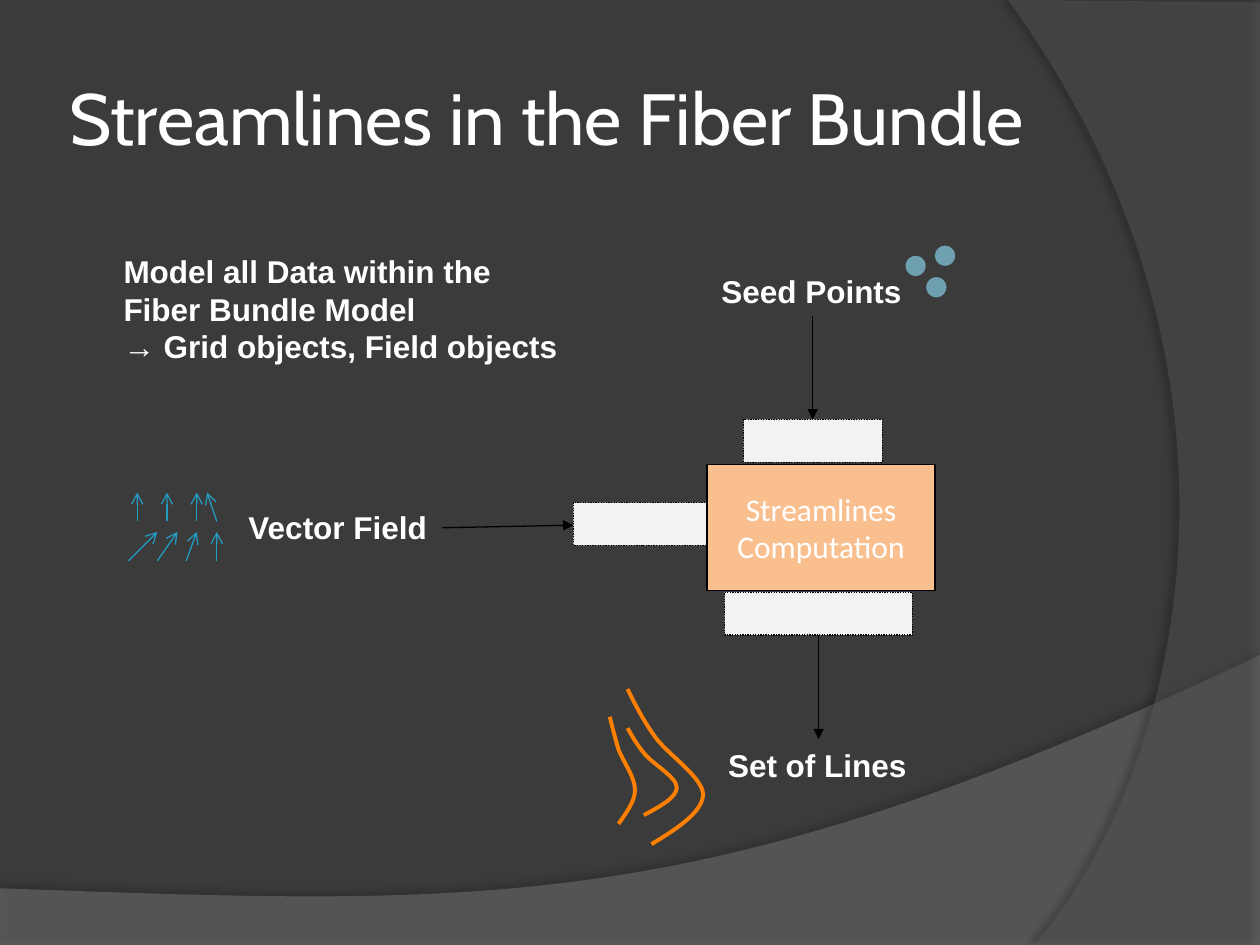
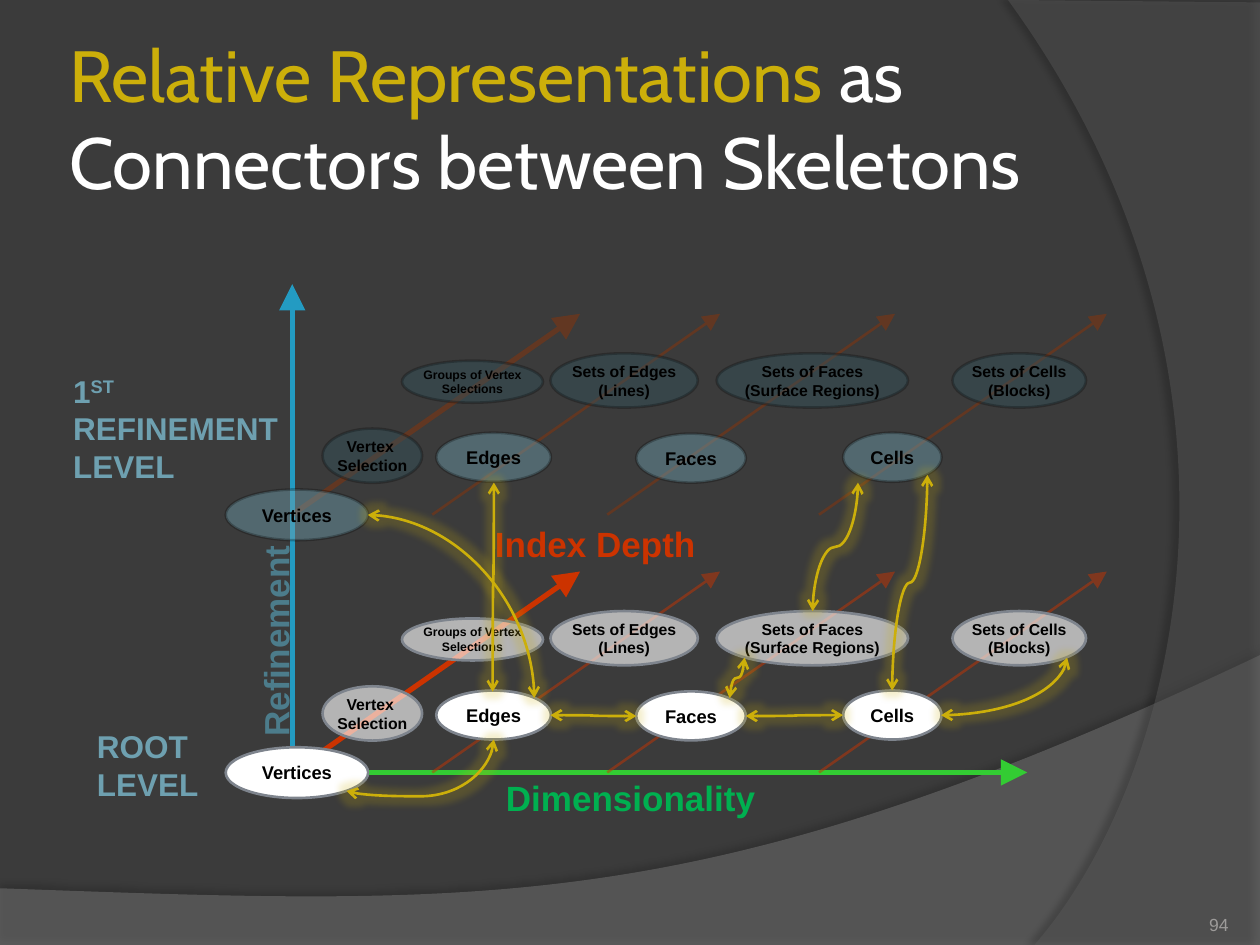
from lxml import etree
from pptx import Presentation
from pptx.dml.color import RGBColor
from pptx.enum.dml import MSO_LINE
from pptx.enum.shapes import MSO_CONNECTOR, MSO_SHAPE
from pptx.enum.text import MSO_ANCHOR, PP_ALIGN
from pptx.oxml.ns import qn
from pptx.util import Pt

STRAIGHT, CURVE = MSO_CONNECTOR.STRAIGHT, MSO_CONNECTOR.CURVE
RECT, OVAL = MSO_SHAPE.RECTANGLE, MSO_SHAPE.OVAL
TOP, MIDDLE, BOTTOM = MSO_ANCHOR.TOP, MSO_ANCHOR.MIDDLE, MSO_ANCHOR.BOTTOM
LEFT, CENTER, RIGHT = PP_ALIGN.LEFT, PP_ALIGN.CENTER, PP_ALIGN.RIGHT
DOTTED = MSO_LINE.ROUND_DOT

BLACK = RGBColor(0x00, 0x00, 0x00)
WHITE = RGBColor(0xFF, 0xFF, 0xFF)
BACKDROP = RGBColor(0x3B, 0x3B, 0x3B)
WAVE_GREY = RGBColor(0x7F, 0x7F, 0x7F)
SIDE_GREY = RGBColor(0x5E, 0x5E, 0x5E)
NUMBER_GREY = RGBColor(0x9D, 0x9B, 0x9A)
RIM_GREY = RGBColor(0x7E, 0x84, 0x8D)
PORT_GREY = RGBColor(0xF2, 0xF2, 0xF2)
PEACH = RGBColor(0xFA, 0xBF, 0x8F)
ORANGE = RGBColor(0xFF, 0x80, 0x00)
GOLD = RGBColor(0xCC, 0xAF, 0x0A)
BLUE = RGBColor(0x23, 0x9B, 0xC2)
STEEL = RGBColor(0x6E, 0xA0, 0xB0)
DEEP_STEEL = RGBColor(0x32, 0x52, 0x5D)
TEAL = RGBColor(0x4C, 0x7C, 0x8B)
RED = RGBColor(0xCC, 0x33, 0x00)
BROWN = RGBColor(0x99, 0x33, 0x00)
LIME = RGBColor(0x33, 0xCC, 0x33)
GREEN = RGBColor(0x00, 0xB0, 0x50)


# ---- Drawing helpers ----
def sub(parent, tag, **attrs):
    return etree.SubElement(parent, qn(tag), {k: str(v) for k, v in attrs.items()})


def fade(parent, percent):
    """Make the first colour inside parent partly transparent."""
    if percent < 100:
        sub(parent.find(".//" + qn("a:srgbClr")), "a:alpha", val=percent * 1000)


def effect(shape, tag, color, percent, **attrs):
    effects = shape._element.spPr.find(qn("a:effectLst"))
    clr = sub(sub(effects, tag, **attrs), "a:srgbClr", val=color)
    sub(clr, "a:alpha", val=percent * 1000)


def paint(shape, fill=None, alpha=100, line=None, width=0.75, line_alpha=100):
    shape.shadow.inherit = False
    if fill is None:
        shape.fill.background()
    else:
        shape.fill.solid()
        shape.fill.fore_color.rgb = fill
        fade(shape._element.spPr.find(qn("a:solidFill")), alpha)
    if line is None:
        shape.line.fill.background()
    else:
        shape.line.color.rgb = line
        shape.line.width = Pt(width)
        fade(shape._element.spPr.find(qn("a:ln")), line_alpha)


def write(tf, lines, size, color, font="Arial", bold=True, align=CENTER,
          anchor=MIDDLE, inset=0):
    """Each line is a string or a list of run strings."""
    tf.vertical_anchor = anchor
    tf.margin_left = tf.margin_right = tf.margin_top = tf.margin_bottom = Pt(inset)
    for i, line in enumerate(lines):
        p = tf.paragraphs[0] if i == 0 else tf.add_paragraph()
        p.alignment = align
        for words in [line] if isinstance(line, str) else line:
            r = p.add_run()
            r.text = words
            r.font.name, r.font.size, r.font.bold = font, Pt(size), bold
            r.font.color.rgb = color


def text(s, x, y, w, h, lines, size, color, wrap=False, **style):
    sp = s.shapes.add_textbox(Pt(x), Pt(y), Pt(w), Pt(h))
    sp.text_frame.word_wrap = wrap
    write(sp.text_frame, lines, size, color, **style)
    return sp


def label(s, x, y, w, h, lines, color=WHITE):
    return text(s, x, y, w, h, lines, 18, color, align=LEFT, anchor=TOP, inset=3.6)


def box(s, kind, x, y, w, h, **look):
    sp = s.shapes.add_shape(kind, Pt(x), Pt(y), Pt(w), Pt(h))
    paint(sp, **look)
    return sp


def node(s, kind, x, y, w, h, lines, size, color, font="Arial", bold=True, **look):
    tf = box(s, kind, x, y, w, h, **look).text_frame
    tf.word_wrap = False
    write(tf, lines, size, color, font, bold)


def arrow(s, x1, y1, x2, y2, color, width=0.75, alpha=100, tail="triangle",
          head=None, kind=STRAIGHT, tip="med"):
    cx = s.shapes.add_connector(kind, Pt(x1), Pt(y1), Pt(x2), Pt(y2))
    cx.line.color.rgb = color
    cx.line.width = Pt(width)
    ln = cx._element.spPr.find(qn("a:ln"))
    fade(ln, alpha)
    if head:
        sub(ln, "a:headEnd", type=head)
    sub(ln, "a:tailEnd", type=tail, w=tip, len=tip)
    sub(cx._element.spPr, "a:effectLst")
    return cx


def link(s, x1, y1, x2, y2, upright=True, bends=3, bend=0.5):
    """Glowing curved double arrow; an upright one leaves its start vertically."""
    cx = arrow(s, x1, y1, x2, y2, GOLD, 1.5, tail="arrow", head="arrow", kind=CURVE)
    if upright:
        w, h = abs(y2 - y1), abs(x2 - x1)
        cx.left, cx.top = Pt((x1 + x2 - w) / 2), Pt((y1 + y2 - h) / 2)
        cx.width, cx.height = Pt(w), Pt(h)
        xfrm = cx._element.spPr.find(qn("a:xfrm"))
        xfrm.set("rot", "5400000")
        xfrm.set("flipH", str(int(y2 < y1)))
        xfrm.set("flipV", str(int(x2 > x1)))
    geom = cx._element.spPr.find(qn("a:prstGeom"))
    geom.set("prst", f"curvedConnector{bends}")
    if bends == 3:
        guides = geom.find(qn("a:avLst"))
        if guides is None:
            guides = sub(geom, "a:avLst")
        sub(guides, "a:gd", name="adj1", fmla=f"val {round(bend * 100000)}")
    effect(cx, "a:glow", GOLD, 20, rad=Pt(8))


def outline(s, x, y, steps, close=False):
    """Steps of two numbers are corners, steps of six are Bezier curves."""
    corners = [(Pt(x + step[-2]), Pt(y + step[-1])) for step in steps]
    fb = s.shapes.build_freeform(*corners[0], scale=1.0)
    fb.add_line_segments(corners[1:], close=close)
    sp = fb.convert_to_shape()
    segments = list(sp._element.iter(qn("a:lnTo")))
    for segment, step in zip(segments, steps[1:]):
        if len(step) == 6:
            segment.tag = qn("a:cubicBezTo")
            for i in (0, 1):
                control = sub(segment, "a:pt", x=Pt(x + step[2 * i]) - sp.left,
                              y=Pt(y + step[2 * i + 1]) - sp.top)
                segment.insert(i, control)
    return sp


# ---- Shared slide frame ----
def new_slide(prs, title):
    s = prs.slides.add_slide(prs.slide_layouts[6])
    s.background.fill.solid()
    s.background.fill.fore_color.rgb = BACKDROP
    wave = [(0, 507.6), (0, 540), (720, 540), (720, 374.4),
            (402.5, 524.9, 281.5, 517.7, 0, 507.6)]
    side = [(720, 1.4), (720, 540), (591.1, 540), (673.2, 445.7, 733, 216, 576, 0)]
    for steps, color, alpha, shade, dist, angle in (
            (wave, WAVE_GREY, 45, 35, 3.5, 270), (side, SIDE_GREY, 40, 45, 4, 180)):
        band = outline(s, 0, 0, steps, close=True)
        paint(band, color, alpha)
        effect(band, "a:outerShdw", BLACK, shade, blurRad=Pt(4), dist=Pt(dist),
               dir=angle * 60000, algn="ctr", rotWithShape=0)
    sp = text(s, 36, 21.6, 588, 90, [title], 41.4, WHITE, wrap=True, font="Cabin",
              bold=False, align=LEFT, inset=3.6)
    return s, sp.text_frame.paragraphs[0]


# ---- Streamlines slide ----
def computation(s, x, y):
    """Central box with its ports and flow arrows."""
    for dx, dy, w in ((10, 73, 107.3), (-76.3, 21.8, 79.2), (21, -25.7, 79.2)):
        port = box(s, RECT, x + dx, y + dy, w, 24.5, fill=PORT_GREY, line=BLACK)
        port.line.dash_style = DOTTED
    node(s, RECT, x, y, 130.3, 72, ["Streamlines", "Computation"], 18, WHITE,
         "Calibri", False, fill=PEACH, line=BLACK)
    for x1, y1, x2, y2 in ((63.8, 98, 63.8, 157), (-151.3, 36.2, -76.3, 34.7),
                           (60.4, -84.7, 60.4, -25.7)):
        arrow(s, x + x1, y + y1, x + x2, y + y2, BLACK)


def vector_glyphs(s, x, y):
    upper = [(5, 5), (22, 22), (39, 39), (50.5, 45)]
    lower = [(0, 16.5), (16.5, 28), (33, 39), (50.5, 50.5)]
    for row, bottom in ((lower, 39), (upper, 16.5)):
        for start, end in row:
            arrow(s, x + start, y + bottom, x + end, y + bottom - 16.5, BLUE, tail="arrow")


def seed_dots(s, x, y, size=11.5):
    for dx, dy in ((0, 5.8), (11.8, 18), (16.8, 0)):
        box(s, OVAL, x + dx, y + dy, size, size, fill=STEEL)


def streamlines(s, x, y):
    for steps in (
            [(5, 77), (9.4, 70.6, 14.4, 64.1, 14.4, 57.6),
             (14.4, 50.4, 7.9, 41.8, 5, 34.6), (2.9, 27.4, 1.4, 21.6, 0, 15.8)],
            [(23.8, 88.6), (38.2, 79.9, 52.6, 70.6, 53.3, 60.5),
             (53.3, 50.4, 33.1, 37.4, 25.9, 27.4), (18.7, 17.3, 14.4, 8.6, 10.1, 0)],
            [(19.4, 72), (28.8, 67, 38.2, 61.9, 38.2, 56.2),
             (38.2, 50.4, 25.2, 43.2, 20.2, 37.4), (15.8, 32.4, 13, 27.4, 10.1, 22.3)]):
        paint(outline(s, x, y, steps), line=ORANGE, width=2.25)


def streamlines_slide(prs):
    s, _ = new_slide(prs, "Streamlines in the Fiber Bundle")
    label(s, 67, 140.4, 265.6, 72, ["Model all Data within the", "Fiber Bundle Model",
                                    "→ Grid objects, Field objects"])
    computation(s, 404, 265.4)
    for x, y, name in ((138.4, 286.6, "Vector Field"), (408.6, 151.9, "Seed Points"),
                       (412.4, 422.6, "Set of Lines")):
        label(s, x, y, 118, 28.8, [name])
    vector_glyphs(s, 73.4, 281.5)
    seed_dots(s, 517.5, 140.4)
    streamlines(s, 348.5, 393.8)


# ---- Skeletons slide ----
def skeleton(s, x, y, solid, faint, rim, depth):
    """One refinement level whose vertices lie at (x, y)."""
    for dx, width, (color, alpha) in zip((0, 80, 180, 301), (3, 1.5, 1.5, 1.5), depth):
        arrow(s, x + dx, y, x + dx + 164.5, y - 114.8, color, width, alpha, tip="lg")
    for look, size, cells in (
            (solid, 10.5, ((-38, -14.4, 81.4, 29, ["Vertices"]),
                           (82.3, -46.8, 65.5, 28, ["Edges"]),
                           (196.6, -46.3, 62.6, 28, ["Faces"]),
                           (314.8, -46.8, 56.2, 28, ["Cells"]))),
            (faint, 9, ((147.6, -92.2, 84.2, 31, ["Sets of Edges", "(Lines)"]),
                        (242.5, -92.2, 109.4, 31, ["Sets of Faces", "(Surface Regions)"]),
                        (377.3, -92.2, 76.3, 31, ["Sets of Cells", "(Blocks)"]),
                        (17.3, -49.2, 56.9, 31, ["Vertex ", "Selection"]))),
            (faint, 7, ((62.7, -88, 80.6, 24, ["Groups of Vertex", "Selections"]),))):
        for dx, dy, w, h, lines in cells:
            node(s, OVAL, x + dx, y + dy, w, h, lines, size, BLACK,
                 width=1.5, **look, **rim)


def axes(s, x, y):
    arrow(s, x, y - 1, x, y - 279, BLUE, 3, tip="lg")
    arrow(s, x, y, x + 420, y, LIME, 3, tip="lg")
    for dx, dy, w, name, color, turn in (
            (108, -146.4, 130.3, "Index Depth", RED, 0),
            (114.2, -1.5, 158.4, "Dimensionality", GREEN, 0),
            (-72, -91, 124.6, "Refinement", TEAL, 270)):
        sp = text(s, x + dx, y + dy, w, 31.7, [name], 20, color)
        sp.rotation = turn


def skeleton_links(s):
    link(s, 198, 452, 282.2, 422.6, bend=-0.105)
    link(s, 314.6, 408.7, 363.6, 409.2, upright=False)
    link(s, 281.5, 395.3, 282.2, 275.8, bend=0.53)
    link(s, 426.2, 409.2, 481.7, 408.7, upright=False)
    link(s, 529.9, 271.4, 509.8, 394.6)
    link(s, 609.8, 375.8, 537.8, 408.7, bends=2)
    link(s, 464.4, 349.2, 490.3, 275.8)
    link(s, 425.5, 375.8, 416.9, 398.9)
    link(s, 210.2, 294.3, 305.3, 398.9, upright=False, bends=2)


def skeletons_slide(prs):
    s, p = new_slide(prs, ["Relative Representations ",
                           "as Connectors between Skeletons"])
    p.runs[0].font.color.rgb = GOLD
    text(s, 642.2, 505.4, 59.8, 28.8, ["94"], 10, NUMBER_GREY, bold=False,
         align=RIGHT, anchor=BOTTOM, wrap=True)
    axes(s, 167, 441.4)
    skeleton(s, 167, 441.4, dict(fill=WHITE), dict(fill=WHITE, alpha=62),
             dict(line=RIM_GREY), [(RED, 100)] + [(RED, 48)] * 3)
    skeleton(s, 167, 294.1, dict(fill=STEEL, alpha=45), dict(fill=DEEP_STEEL, alpha=44),
             dict(line=BLACK, line_alpha=25), [(BROWN, 42)] * 4)
    label(s, 51.8, 411.8, 73, 51, ["ROOT", "LEVEL"], STEEL)
    sp = label(s, 38.2, 208.8, 132, 73, [["1", "ST"], "REFINEMENT", "LEVEL"], STEEL)
    ordinal = sp.text_frame.paragraphs[0].runs[1]
    ordinal.font._element.set("baseline", "30000")
    skeleton_links(s)


def main():
    prs = Presentation()
    prs.slide_width, prs.slide_height = Pt(720), Pt(540)
    streamlines_slide(prs)
    skeletons_slide(prs)
    prs.save("out.pptx")


if __name__ == "__main__":
    main()
